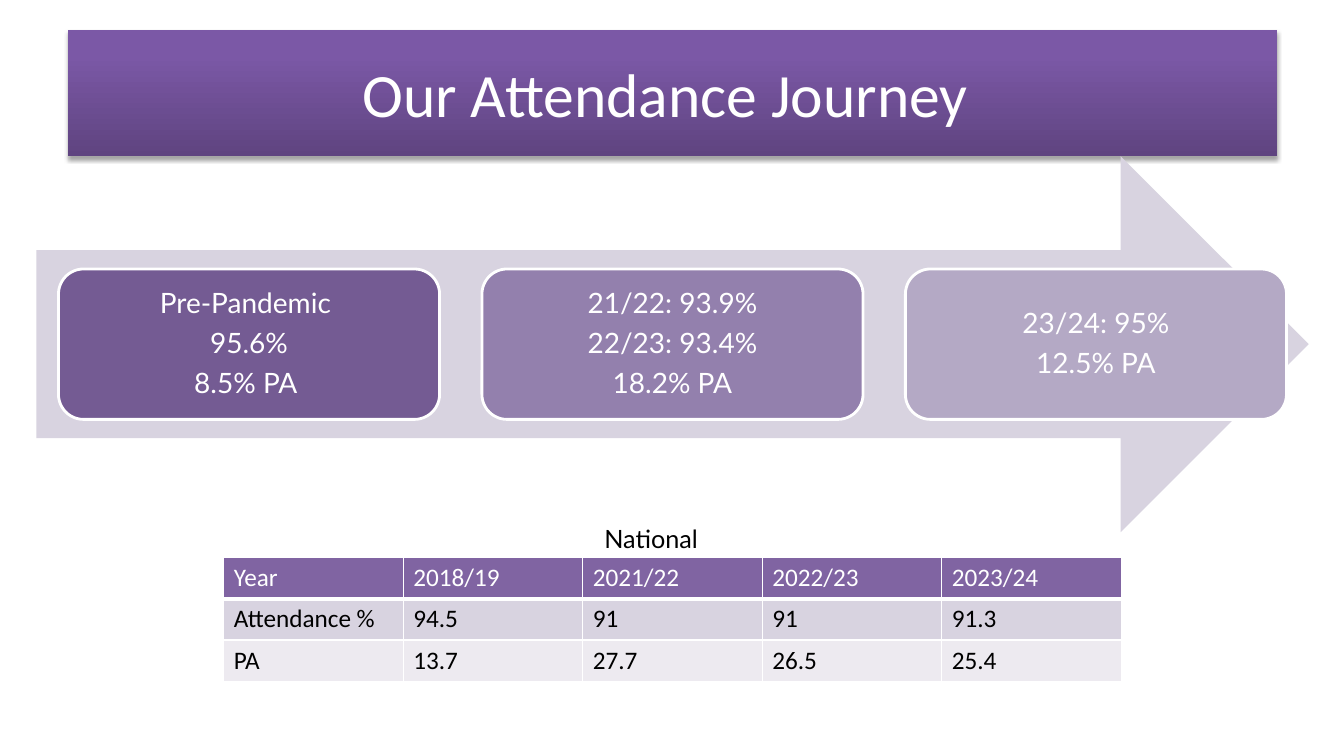
from lxml import etree
from pptx import Presentation
from pptx.dml.color import RGBColor
from pptx.enum.shapes import MSO_SHAPE as SHAPE
from pptx.enum.text import MSO_ANCHOR as ANCHOR, PP_ALIGN as ALIGN
from pptx.oxml import parse_xml
from pptx.oxml.ns import nsdecls
from pptx.util import Inches, Pt

# Content
TITLE = "Our Attendance Journey "
STAGES = [
    ("stage1", ["Pre-Pandemic ", "95.6%", "8.5% PA "]),
    ("stage2", ["21/22: 93.9%", "22/23: 93.4%", "18.2% PA"]),
    ("stage3", ["23/24: 95%", "12.5% PA"]),
]
CAPTION = "National "
NATIONAL = [
    ["Year", "2018/19", "2021/22", "2022/23", "2023/24"],
    ["Attendance %", "94.5", "91", "91", "91.3"],
    ["PA", "13.7", "27.7", "26.5", "25.4"],
]
ROW_FILLS = ["header", "band", "light"]
COLORS = {
    "white": "FFFFFF", "black": "000000",
    "title_dark": "5F4480", "title_mid": "7B58A6", "title_top": "7C57A8",
    "band": "D8D3E0", "light": "EDEAF0", "header": "8064A2",
    "stage1": "745B93", "stage2": "9380AD", "stage3": "B4A9C5",
}

# Layout in inches
SLIDE_W, SLIDE_H = 13.33, 7.5
TITLE_BOX = (0.67, 0.3, 12, 1.25)
ARROW_BOX = (0.36, 1.55, 12.62, 3.73)
CAPTION_BOX = (4.02, 5.14, 4.94, 0.4)
CARD_X, CARD_W, CARD_PITCH = 0.58, 3.78, 4.2
CARD_H = ARROW_BOX[3] * 0.4
CARD_Y = ARROW_BOX[1] + (ARROW_BOX[3] - CARD_H) / 2
TABLE_X, TABLE_Y, COL_W, ROW_H = 2.22, 5.53, 1.78, 0.41


def rgb(name):
    return RGBColor.from_string(COLORS[name])


def add_box(kind, box, fill=None, line=None):
    sp = slide.shapes.add_shape(kind, *map(Inches, box))
    sp.shadow.inherit = False
    if fill:
        sp.fill.solid()
        sp.fill.fore_color.rgb = rgb(fill)
    if line:
        sp.line.color.rgb = rgb(line)
        sp.line.width = Pt(2)
    else:
        sp.line.fill.background()
    return sp


def write(tf, lines, font, size, color, align=ALIGN.CENTER):
    tf.word_wrap = True
    for i, text in enumerate(lines):
        p = tf.paragraphs[0] if i == 0 else tf.add_paragraph()
        p.text = text
        p.alignment = align
        p.font.name, p.font.size, p.font.bold = font, Pt(size), False
        p.font.color.rgb = rgb(color)


def add_borders(cell, bottom):
    tcPr = cell.fill._xPr
    for i, side in enumerate("LRTB"):
        width = Pt(bottom if side == "B" else 1)
        tcPr.insert(i, parse_xml(
            f'<a:ln{side} {nsdecls("a")} w="{width}"><a:solidFill>'
            f'<a:srgbClr val="{COLORS["white"]}"/></a:solidFill></a:ln{side}>'))


prs = Presentation()
prs.slide_width, prs.slide_height = Inches(SLIDE_W), Inches(SLIDE_H)
slide = prs.slides.add_slide(prs.slide_layouts[6])

# Title banner with gradient and soft shadow
sp = add_box(SHAPE.RECTANGLE, TITLE_BOX)
stops = "".join(
    f'<a:gs pos="{pos * 1000}"><a:srgbClr val="{COLORS[name]}"/></a:gs>'
    for pos, name in [(0, "title_dark"), (80, "title_mid"), (100, "title_top")])
spPr = sp._element.spPr
spPr.find("{*}prstGeom").addnext(parse_xml(
    f'<a:gradFill {nsdecls("a")} rotWithShape="1"><a:gsLst>{stops}</a:gsLst>'
    '<a:lin ang="16200000" scaled="0"/></a:gradFill>'))
spPr.find("{*}effectLst").append(parse_xml(
    f'<a:outerShdw {nsdecls("a")} blurRad="{Pt(3.1)}" dist="{Pt(1.8)}" '
    'dir="5400000" rotWithShape="0"><a:srgbClr val="000000">'
    '<a:alpha val="35000"/></a:srgbClr></a:outerShdw>'))
sp.text_frame.vertical_anchor = ANCHOR.MIDDLE
write(sp.text_frame, [TITLE], "Calibri", 44, "white")

# Journey arrow and its stages
add_box(SHAPE.RIGHT_ARROW, ARROW_BOX, "band")
for i, (color, lines) in enumerate(STAGES):
    box = (CARD_X + i * CARD_PITCH, CARD_Y, CARD_W, CARD_H)
    sp = add_box(SHAPE.ROUNDED_RECTANGLE, box, color, "white")
    tf = sp.text_frame
    tf.vertical_anchor = ANCHOR.MIDDLE
    tf.margin_left = tf.margin_right = Inches(0.08)
    tf.margin_top = tf.margin_bottom = Inches(0.08)
    write(tf, lines, "Lato", 20, "white")
    for p in tf.paragraphs:
        p.line_spacing, p.space_after = 0.9, Pt(7)

# National figures
n_rows, n_cols = len(NATIONAL), len(NATIONAL[0])
table = slide.shapes.add_table(
    n_rows, n_cols, Inches(TABLE_X), Inches(TABLE_Y),
    Inches(COL_W * n_cols), Inches(ROW_H * n_rows)).table
for r, (values, fill) in enumerate(zip(NATIONAL, ROW_FILLS)):
    for c, value in enumerate(values):
        cell = table.cell(r, c)
        cell.fill.solid()
        cell.fill.fore_color.rgb = rgb(fill)
        add_borders(cell, bottom=3 if r == 0 else 1)
        write(cell.text_frame, [value], "Calibri", 18,
              "white" if r == 0 else "black", ALIGN.LEFT)

# Table caption
sp = slide.shapes.add_textbox(*map(Inches, CAPTION_BOX))
write(sp.text_frame, [CAPTION], "Lato", 18, "black")

prs.save("out.pptx")
